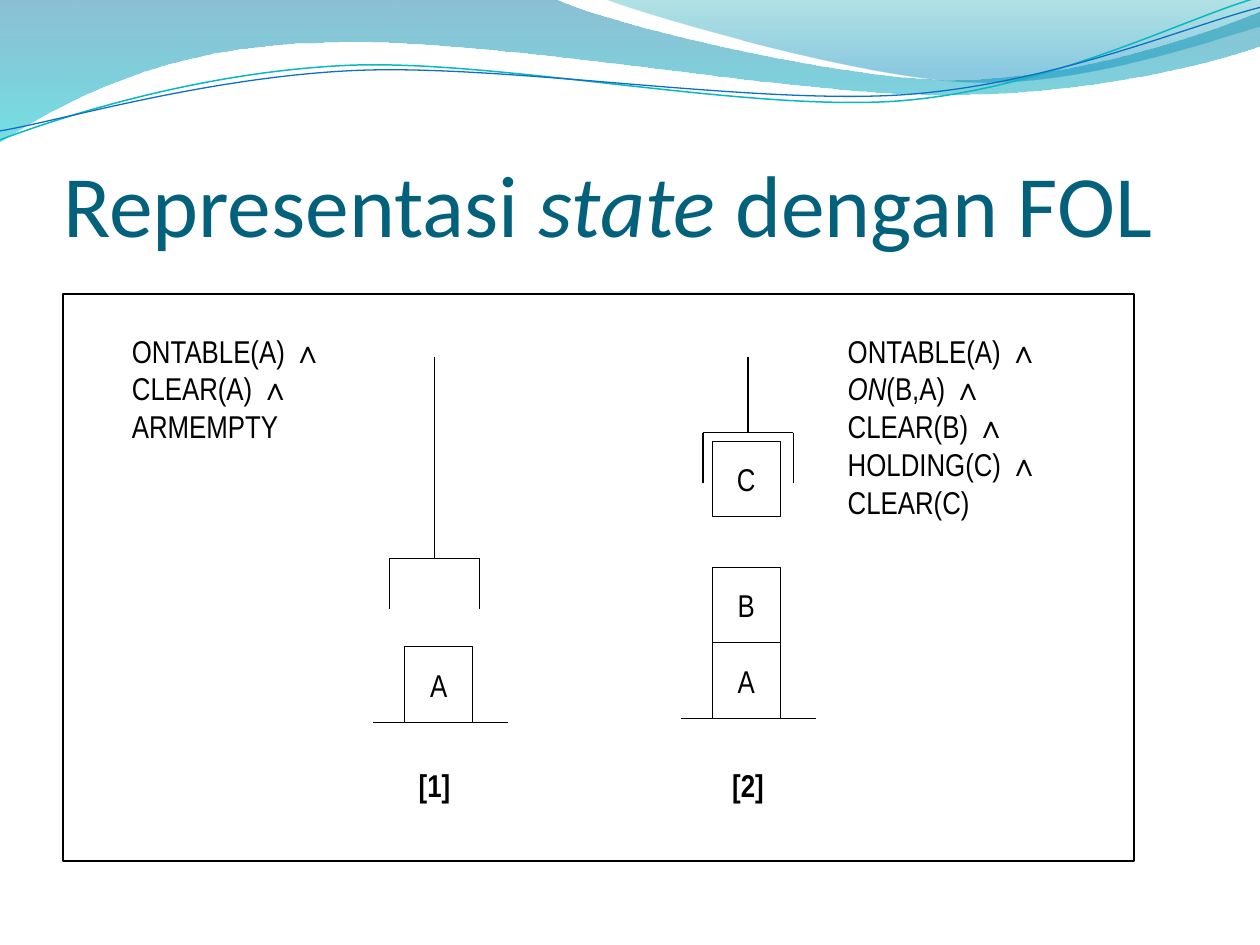
from dataclasses import dataclass
from typing import NamedTuple

from lxml.etree import SubElement
from pptx import Presentation
from pptx.dml.color import RGBColor
from pptx.enum.shapes import MSO_CONNECTOR as Connector, MSO_SHAPE as Shape
from pptx.enum.text import MSO_ANCHOR as Anchor, MSO_AUTO_SIZE as AutoSize, PP_ALIGN as Align
from pptx.oxml.ns import qn
from pptx.util import Cm, Pt

COLORS = {
    "ink": "000000", "paper": "FFFFFF", "title": "04617B",
    "sea": "0074A1", "foam": "00C6CF", "lagoon": "00A1A9", "sky": "008BBF",
    "teal": "0AB8BF", "blue": "0F6FC6",
}
BLOCK_WIDTH, BLOCK_HEIGHT = 1.37, 1.52
TABLE_WIDTH = 2.73
ARM_TOP, ARM_HALF, FINGER = 7.19, 0.91, 1.02
HELD_GAP = 0.18
WAVE_TILT = -2.7


class Span(NamedTuple):
    text: str
    italic: bool = False


class Stop(NamedTuple):
    position: float
    color: str
    opacity: int


@dataclass
class Wave:
    """A path of (x, y) line ends and six-number Bezier curves, in cm."""
    start: tuple
    segments: list
    stops: tuple = ()
    color: str = ""
    width: float = 0


@dataclass
class Scene:
    label: str
    arm_x: float
    arm_y: float
    block_x: float
    table_x: float
    table_y: float
    stack: str
    held: str
    facts_x: float
    facts_height: float
    facts: list


FILLED_WAVES = [
    Wave((0, -0.03), [
        (11.18, -0.03), (12.09, 0.43, 16.87, 1.6, 19.25, 1.6),
        (21.67, 1.6, 24.33, 0.66, 25.4, 0.23), (25.43, 0.91),
        (24.97, 1.12, 22.1, 1.93, 18.95, 1.91), (15.8, 1.91, 9.7, 0.71, 6.53, 0.86),
        (3.28, 0.89, 1.17, 2.11, -0.03, 2.87), (0, -0.03),
    ], stops=(Stop(0, "sea", 45), Stop(1, "foam", 55))),
    Wave((12.17, -0.03), [
        (12.93, 0.28, 17.32, 1.57, 19.53, 1.65),
        (21.74, 1.75, 24.41, 0.81, 25.4, 0.53), (25.4, 0), (12.17, -0.03),
    ], stops=(Stop(0, "lagoon", 30), Stop(0.8, "sky", 45))),
]
LINE_WAVES = [
    Wave((-0.05, 2.22), [
        (1.19, 1.82, 4.02, 1.04, 7.05, 1.05), (10.05, 1.07, 15.02, 2.37, 18.08, 2.29),
        (21.13, 2.2, 23.87, 0.91, 25.41, 0.55),
    ], color="teal", width=0.85),
    Wave((-0.04, 2.04), [
        (1.16, 1.9, 4.18, 1.15, 7.2, 1.16), (10.25, 1.18, 15.13, 2.23, 18.18, 2.17),
        (21.21, 2.1, 23.93, 1.06, 25.45, 0.75),
    ], color="blue", width=0.75),
]
SCENES = [
    Scene("[1]", 8.76, 11.26, 8.16, 7.52, 14.56, "A", "", 2.41, 4.06,
          [[Span("ONTABLE(A) ∧")], [Span("CLEAR(A) ∧")], [Span("ARMEMPTY")]]),
    Scene("[2]", 15.08, 8.72, 14.36, 13.72, 14.48, "AB", "C", 16.84, 5.26,
          [[Span("ONTABLE(A) ∧")], [Span("ON", True), Span("(B,A) ∧")],
           [Span("CLEAR(B) ∧")], [Span("HOLDING(C) ∧")], [Span("CLEAR(C)")]]),
]


def rgb(name: str) -> RGBColor:
    return RGBColor.from_string(COLORS[name])


def write(frame, lines: list, *, size: float = 18, font: str = "Arial Narrow",
          color: str = "ink", bold: bool = False, align=Align.LEFT, anchor=Anchor.TOP) -> None:
    frame.word_wrap = True
    frame.auto_size = AutoSize.NONE
    frame.vertical_anchor = anchor
    for index, spans in enumerate(lines):
        para = frame.add_paragraph() if index else frame.paragraphs[0]
        para.alignment = align
        for text, italic in spans:
            span = para.add_run()
            span.text = text
            span.font.size, span.font.name = Pt(size), font
            span.font.bold, span.font.italic = bold, italic
            span.font.color.rgb = rgb(color)


def add_text(group, x: float, y: float, width: float, height: float, lines: list, **style) -> None:
    box = group.shapes.add_textbox(Cm(x), Cm(y), Cm(width), Cm(height))
    write(box.text_frame, lines, **style)


def add_box(group, x: float, y: float, width: float, height: float, fill: str = ""):
    box = group.shapes.add_shape(Shape.RECTANGLE, Cm(x), Cm(y), Cm(width), Cm(height))
    box.shadow.inherit = False
    if fill:
        box.fill.solid()
        box.fill.fore_color.rgb = rgb(fill)
    else:
        box.fill.background()
    box.line.color.rgb = rgb("ink")
    box.line.width = Pt(0.75)
    return box


def add_block(group, x: float, y: float, letter: str) -> None:
    box = add_box(group, x, y, BLOCK_WIDTH, BLOCK_HEIGHT, "paper")
    write(box.text_frame, [[Span(letter)]], align=Align.CENTER, anchor=Anchor.MIDDLE)


def add_line(group, x1: float, y1: float, x2: float, y2: float) -> None:
    line = group.shapes.add_connector(Connector.STRAIGHT, Cm(x1), Cm(y1), Cm(x2), Cm(y2))
    line.line.color.rgb = rgb("ink")
    line.line.width = Pt(0.75)
    SubElement(line._element.spPr, qn("a:effectLst"))


def bend(shape, segments: list) -> None:
    """Turn each run of three straight pieces that stands for a curve into that curve."""
    pieces = iter(list(shape._element.spPr.iter(qn("a:lnTo"))))
    for segment in segments:
        first = next(pieces)
        if len(segment) == 6:
            first.tag = qn("a:cubicBezTo")
            for _ in range(2):
                piece = next(pieces)
                first.append(piece[0])
                piece.getparent().remove(piece)


def add_wave(group, wave: Wave):
    points = [(Cm(segment[i]), Cm(segment[i + 1]))
              for segment in wave.segments for i in range(0, len(segment), 2)]
    builder = group.shapes.build_freeform(Cm(wave.start[0]), Cm(wave.start[1]))
    builder.add_line_segments(points, close=bool(wave.stops))
    shape = builder.convert_to_shape()
    bend(shape, wave.segments)
    shape.shadow.inherit = False
    return shape


def add_filled_wave(group, wave: Wave) -> None:
    shape = add_wave(group, wave)
    shape.line.fill.background()
    shape.fill.gradient()
    shape.fill.gradient_angle = 270
    for target, stop in zip(shape.fill.gradient_stops, wave.stops):
        target.position = stop.position
        target.color.rgb = rgb(stop.color)
    for color, stop in zip(shape._element.spPr.iter(qn("a:srgbClr")), wave.stops):
        SubElement(color, qn("a:alpha"), val=str(stop.opacity * 1000))


def add_line_wave(group, wave: Wave) -> None:
    shape = add_wave(group, wave)
    shape.rotation = WAVE_TILT
    shape.fill.background()
    shape.line.color.rgb = rgb(wave.color)
    shape.line.width = Pt(wave.width)


def add_scene(group, scene: Scene) -> None:
    for level, letter in enumerate(scene.stack, start=1):
        add_block(group, scene.block_x, scene.table_y - level * BLOCK_HEIGHT, letter)
    if scene.held:
        add_block(group, scene.block_x, scene.arm_y + HELD_GAP, scene.held)
    add_line(group, scene.table_x, scene.table_y, scene.table_x + TABLE_WIDTH, scene.table_y)
    left, right = scene.arm_x - ARM_HALF, scene.arm_x + ARM_HALF
    add_line(group, scene.arm_x, ARM_TOP, scene.arm_x, scene.arm_y)
    add_line(group, left, scene.arm_y, right, scene.arm_y)
    for x in (left, right):
        add_line(group, x, scene.arm_y, x, scene.arm_y + FINGER)
    add_text(group, scene.facts_x, 6.56, 5.46, scene.facts_height, scene.facts)
    add_text(group, scene.arm_x - 1.13, 15.32, 2.26, 2.03, [[Span(scene.label)]],
             bold=True, align=Align.CENTER)


def main() -> None:
    deck = Presentation()
    deck.slide_width, deck.slide_height = Cm(25.4), Cm(19.05)
    page = deck.slides.add_slide(deck.slide_layouts[5])
    for wave in FILLED_WAVES:
        add_filled_wave(page, wave)
    ripples = page.shapes.add_group_shape()
    for wave in LINE_WAVES:
        add_line_wave(ripples, wave)
    title = page.shapes.title
    page.shapes._spTree.append(title._element)
    title.left, title.top, title.width, title.height = Cm(1.27), Cm(1.96), Cm(22.86), Cm(3.18)
    frame = title.text_frame
    frame.margin_left = frame.margin_right = frame.margin_bottom = 0
    write(frame, [[Span("Representasi "), Span("state ", True), Span("dengan FOL")]],
          size=50, font="Calibri", color="title", anchor=Anchor.BOTTOM)
    diagram = page.shapes.add_group_shape()
    add_box(diagram, 1.27, 5.93, 21.59, 11.43)
    for scene in SCENES:
        add_scene(diagram, scene)
    deck.save("out.pptx")


if __name__ == "__main__":
    main()
